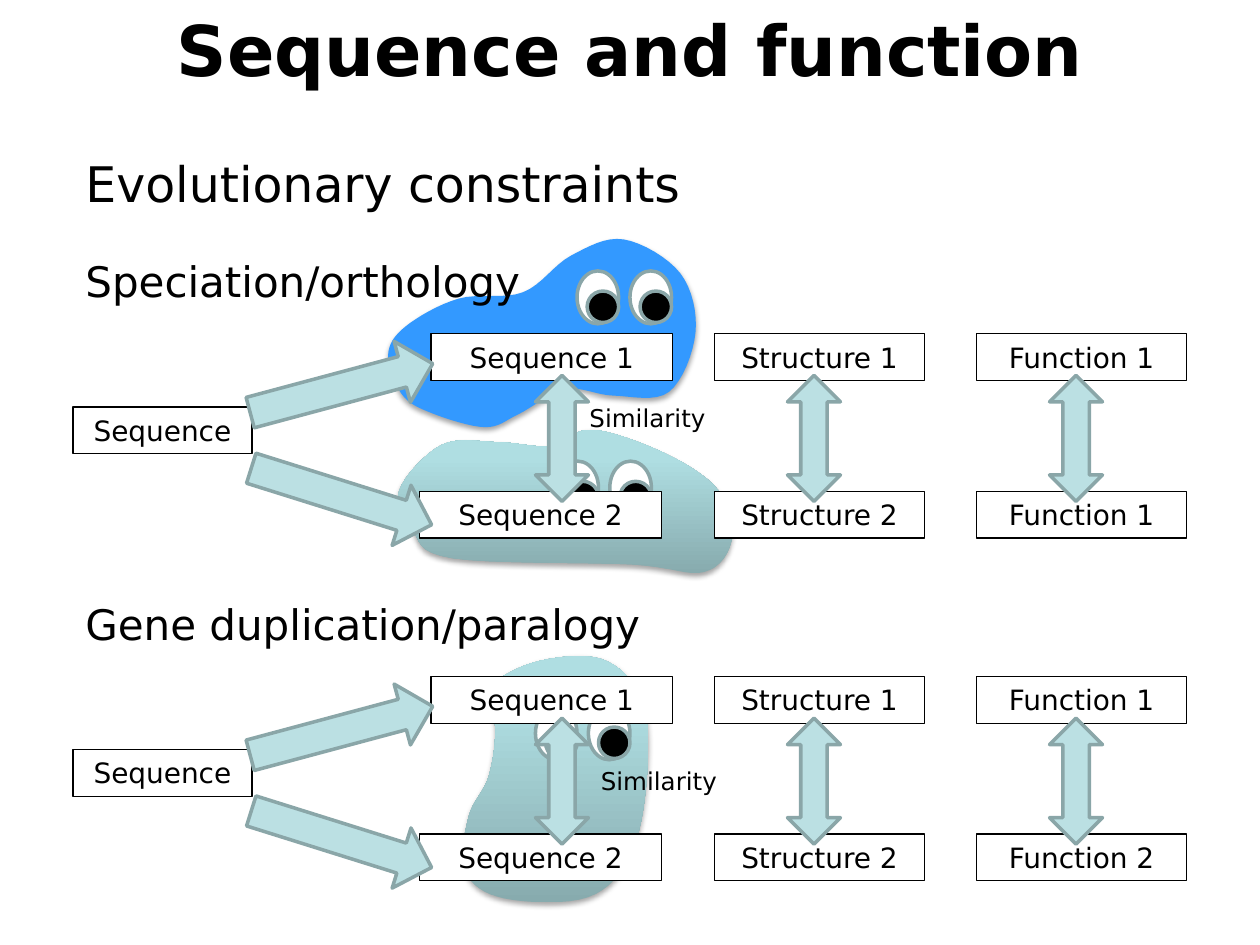
"""Builds the slide on sequence and function under speciation and gene duplication."""
import copy

import pptx
import pptx.dml.color
import pptx.enum.shapes
import pptx.enum.text
import pptx.oxml
import pptx.oxml.ns
import pptx.util

PX = 9144
FONT = "DejaVu Sans"
COLORS = {"black": "000000", "white": "FFFFFF", "blue": "3399FF",
          "arrow": "BBE0E3", "edge": "8AA6A8"}
GRADIENT = [(0, "87ABAE"), (0.8, "AFDEE2"), (1, "AFE0E4")]
SHAPE = pptx.enum.shapes.MSO_SHAPE
ALIGN = pptx.enum.text.PP_ALIGN

TITLE = "Sequence and function"
HEADINGS = [("Evolutionary constraints", 117, 917, 57, 28),
            ("Speciation/orthology", 198, 567, 50, 24),
            ("Gene duplication/paralogy", 470, 567, 50, 24)]
COLUMNS = [("Sequence", 342, 333, 192, 396),
           ("Structure", 567, 567, 167, 596),
           ("Function", 775, 775, 167, 804)]
DIAGRAMS = [
    {"top": 265, "last": 1, "similarity": (458, 315)},
    {"top": 537, "last": 2, "similarity": (467, 603)},
]
CREATURES = [
    {"fill": None, "eyes": (442, 366), "outline": [
        (559, 454), (581, 427), (570, 389), (528, 360), (470, 341), (438, 354),
        (396, 351), (351, 353), (317, 389), (327, 420), (359, 443), (501, 448)]},
    {"fill": "blue", "eyes": (458, 215), "outline": [
        (364, 237), (322, 259), (308, 282), (319, 313), (343, 328), (385, 339),
        (411, 329), (449, 309), (487, 314), (531, 311), (552, 264), (540, 217),
        (495, 190), (453, 203), (415, 232)]},
    {"fill": None, "eyes": (425, 561), "outline": [
        (393, 576), (388, 616), (372, 648), (369, 691), (400, 713), (467, 712),
        (502, 675), (514, 608), (509, 554), (477, 523), (423, 526), (384, 550)]},
]
SHADOW = ('<a:outerShdw %s blurRad="39400" dist="22900" dir="5400000" rotWithShape="0">'
          '<a:srgbClr val="000000"><a:alpha val="35000"/></a:srgbClr></a:outerShdw>'
          % pptx.oxml.ns.nsdecls("a"))


def rgb(name):
    return pptx.dml.color.RGBColor.from_string(COLORS.get(name, name))


def set_text(s, text, size, align=ALIGN.LEFT, bold=False):
    tf = s.text_frame
    tf.word_wrap = True
    tf.vertical_anchor = pptx.enum.text.MSO_ANCHOR.TOP
    p = tf.paragraphs[0]
    p.text = text
    p.alignment = align
    font = p.runs[0].font
    font.name, font.size, font.bold = FONT, pptx.util.Pt(size), bold
    font.color.rgb = rgb("black")


def add_label(slide, text, x, y, w, h, size):
    s = slide.shapes.add_textbox(x * PX, y * PX, w * PX, h * PX)
    set_text(s, text, size)


def add_shape(slide, kind, x, y, w, h, fill, line="edge", width=2, rotation=0):
    s = slide.shapes.add_shape(kind, x * PX, y * PX, w * PX, h * PX)
    s.shadow.inherit = False
    s.rotation = rotation
    if fill:
        s.fill.solid()
        s.fill.fore_color.rgb = rgb(fill)
    else:
        s.fill.background()
    s.line.color.rgb = rgb(line)
    s.line.width = pptx.util.Pt(width)
    return s


def add_box(slide, text, x, y, w, fill="white"):
    s = add_shape(slide, SHAPE.RECTANGLE, x, y, w, 37, fill, "black", 0.75)
    set_text(s, text, 16, ALIGN.CENTER)


def smooth(points, steps=8):
    """Return a closed Catmull-Rom curve through the points."""
    curve = []
    for i in range(len(points)):
        corners = [points[(i + k) % len(points)] for k in range(-1, 3)]
        for step in range(steps):
            t = step / steps
            curve.append(tuple(
                b + t / 2 * (c - a + t * (2 * a - 5 * b + 4 * c - d
                                          + t * (3 * (b - c) + d - a)))
                for a, b, c, d in zip(*corners)))
    return curve


def add_creature(slide, creature):
    start, *rest = [(round(x * PX), round(y * PX)) for x, y in smooth(creature["outline"])]
    builder = slide.shapes.build_freeform(*start)
    builder.add_line_segments(rest, close=True)
    s = builder.convert_to_shape()
    s.line.fill.background()
    if creature["fill"]:
        s.fill.solid()
        s.fill.fore_color.rgb = rgb(creature["fill"])
    else:
        s.fill.gradient()
        s.fill.gradient_angle = 90
        stops = s.element.find(".//" + pptx.oxml.ns.qn("a:gsLst"))
        stops.append(copy.deepcopy(stops[-1]))
        for stop, (position, color) in zip(s.fill.gradient_stops, GRADIENT):
            stop.position = position
            stop.color.rgb = rgb(color)
    s.shadow.inherit = False
    effects = s.element.find(".//" + pptx.oxml.ns.qn("a:effectLst"))
    effects.append(pptx.oxml.parse_xml(SHADOW))
    left, top = creature["eyes"]
    for x in (left, left + 42):
        add_shape(slide, SHAPE.OVAL, x, top, 33, 42, "white")
        add_shape(slide, SHAPE.OVAL, x + 8, top + 16, 25, 25, "black")


def add_diagram(slide, diagram):
    top = diagram["top"]
    add_box(slide, "Sequence", 58, top + 58, 142, None)
    for name, upper, lower, w, arrow in COLUMNS:
        number = diagram["last"] if name == "Function" else 2
        add_box(slide, f"{name} 1", upper, top, w)
        add_box(slide, f"{name} {number}", lower, top + 125, w)
        add_shape(slide, SHAPE.LEFT_RIGHT_ARROW, arrow, top + 62, 100, 42, "arrow", rotation=90)
    for dy, rotation in ((-32, 255), (54, 287.4)):
        add_shape(slide, SHAPE.DOWN_ARROW, 246, top + dy, 50, 150, "arrow", rotation=rotation)
    add_label(slide, "Similarity", *diagram["similarity"], 208, 34, 14)


def main():
    prs = pptx.Presentation()
    prs.slide_width, prs.slide_height = 1000 * PX, 750 * PX
    slide = prs.slides.add_slide(prs.slide_layouts[5])
    title = slide.shapes.title
    title.left, title.top, title.width, title.height = 0, 0, 1000 * PX, 77 * PX
    set_text(title, TITLE, 40, ALIGN.CENTER, True)
    for creature in CREATURES:
        add_creature(slide, creature)
    for text, y, w, h, size in HEADINGS:
        add_label(slide, text, 58, y, w, h, size)
    for diagram in DIAGRAMS:
        add_diagram(slide, diagram)
    prs.save("out.pptx")


if __name__ == "__main__":
    main()
